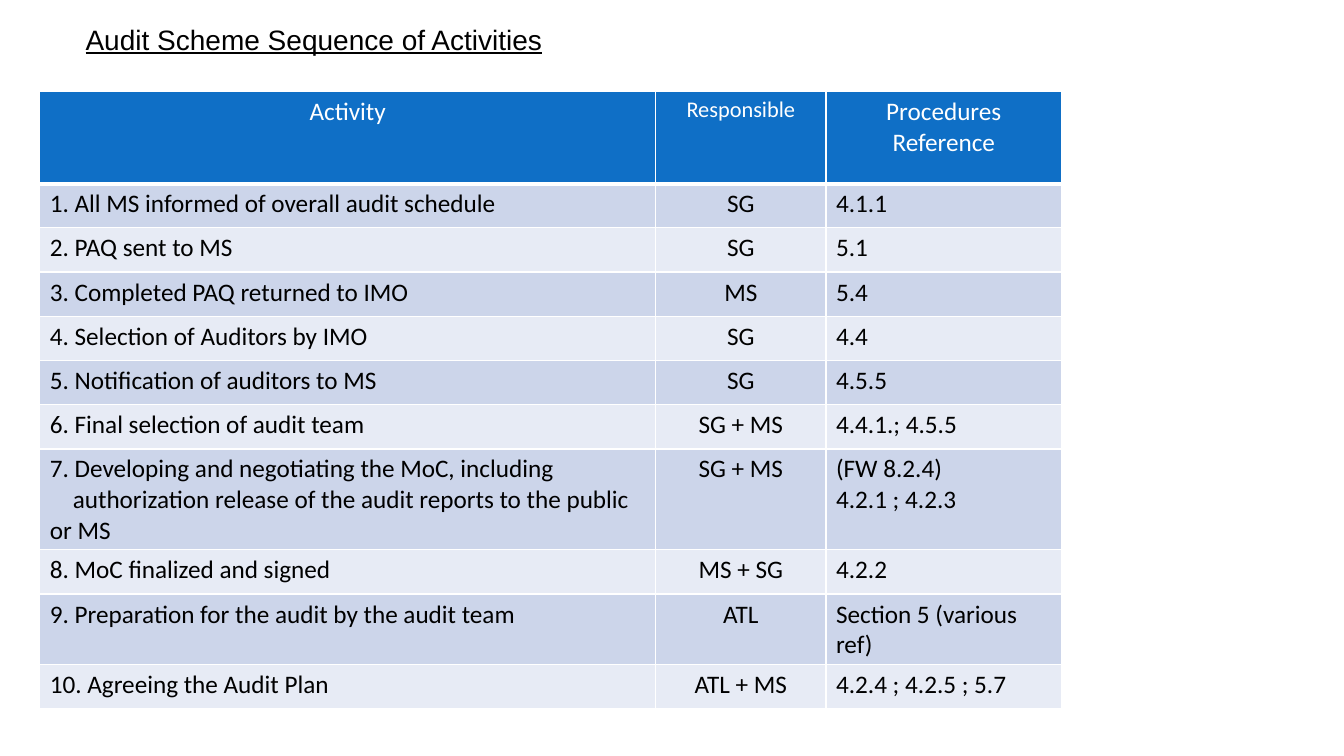
import pptx
import pptx.dml.color
import pptx.enum.text
import pptx.oxml
import pptx.oxml.ns
import pptx.util

Pt = pptx.util.Pt
Align = pptx.enum.text.PP_ALIGN

TITLE = "Audit Scheme Sequence of Activities"
HEADINGS = ("Activity", "Responsible", "Procedures Reference")
ACTIVITIES = [
    ("1. All MS informed of overall audit schedule", "SG", "4.1.1"),
    ("2. PAQ sent to MS", "SG", "5.1"),
    ("3. Completed PAQ returned to IMO", "MS", "5.4"),
    ("4. Selection of Auditors by IMO", "SG", "4.4"),
    ("5. Notification of auditors to MS", "SG", "4.5.5"),
    ("6. Final selection of audit team", "SG + MS", "4.4.1.; 4.5.5"),
    ("7. Developing and negotiating the MoC, including\n"
     "authorization release of the audit reports to the public or MS",
     "SG + MS", "(FW 8.2.4)\n4.2.1 ; 4.2.3"),
    ("8. MoC finalized and signed", "MS + SG", "4.2.2"),
    ("9. Preparation for the audit by the audit team", "ATL", "Section 5 (various ref)"),
    ("10. Agreeing the Audit Plan", "ATL + MS", "4.2.4 ; 4.2.5 ; 5.7"),
]

THEME = {
    "title_font": "Arial", "table_font": "Calibri",
    "title_size": 20, "table_size": 18, "small_size": 16,
    "text": "000000", "heading_text": "FFFFFF", "rule": "FFFFFF",
    "heading_fill": "0F6FC6", "bands": ("CCD5EA", "E7EBF5"),
}

TITLE_AREA = (54, 12.25, 364.5, 31.5)
TABLE_LEFT, TABLE_TOP = 28.4, 65.4
COLUMN_WIDTHS = (440, 121.6, 168.4)
HEADING_HEIGHT, ROW_HEIGHT, LINE_HEIGHT = 65.8, 31.6, 21.6
CONTINUATION_INDENT = 16.4


def rgb(value):
    return pptx.dml.color.RGBColor.from_string(value)


def write(frame, text, font, size, color, align=Align.LEFT, underline=None, indent=0):
    frame.word_wrap = True
    for index, line in enumerate(text.split("\n")):
        para = frame.paragraphs[0] if index == 0 else frame.add_paragraph()
        para.alignment = align
        if index and indent:
            properties = para._p.get_or_add_pPr()
            properties.set("marL", "0")
            properties.set("indent", str(Pt(indent)))
        span = para.add_run()
        span.text = line
        span.font.name = font
        span.font.size = Pt(size)
        span.font.underline = underline
        span.font.color.rgb = rgb(color)


def style_cell(cell, fill, bottom_width):
    properties = cell._tc.get_or_add_tcPr()
    for side, width in (("L", 1), ("R", 1), ("T", 1), ("B", bottom_width)):
        properties.append(pptx.oxml.parse_xml(
            f'<a:ln{side} {pptx.oxml.ns.nsdecls("a")} w="{Pt(width)}"><a:solidFill>'
            f'<a:srgbClr val="{THEME["rule"]}"/></a:solidFill></a:ln{side}>'))
    cell.fill.solid()
    cell.fill.fore_color.rgb = rgb(fill)


def add_title(page):
    box = page.shapes.add_textbox(*map(Pt, TITLE_AREA))
    write(box.text_frame, TITLE, THEME["title_font"], THEME["title_size"],
          THEME["text"], underline=True)


def add_activities(page):
    rows = [HEADINGS, *ACTIVITIES]
    heights = [HEADING_HEIGHT] + [
        ROW_HEIGHT + LINE_HEIGHT * max(text.count("\n") for text in row)
        for row in ACTIVITIES]
    table = page.shapes.add_table(
        len(rows), len(HEADINGS), Pt(TABLE_LEFT), Pt(TABLE_TOP),
        Pt(sum(COLUMN_WIDTHS)), Pt(sum(heights))).table
    for column, width in zip(table.columns, COLUMN_WIDTHS):
        column.width = Pt(width)
    for row_index, (row, height) in enumerate(zip(rows, heights)):
        heading = row_index == 0
        table.rows[row_index].height = Pt(height)
        fill = THEME["heading_fill"] if heading else THEME["bands"][(row_index - 1) % 2]
        for column_index, text in enumerate(row):
            cell = table.cell(row_index, column_index)
            style_cell(cell, fill, bottom_width=3 if heading else 1)
            responsible = column_index == 1
            write(cell.text_frame, text, THEME["table_font"],
                  THEME["small_size" if heading and responsible else "table_size"],
                  THEME["heading_text" if heading else "text"],
                  align=Align.CENTER if heading or responsible else Align.LEFT,
                  indent=CONTINUATION_INDENT if column_index == 0 else 0)


def main():
    deck = pptx.Presentation()
    deck.slide_width, deck.slide_height = Pt(960), Pt(540)
    page = deck.slides.add_slide(deck.slide_layouts[6])
    add_title(page)
    add_activities(page)
    deck.save("out.pptx")


if __name__ == "__main__":
    main()
